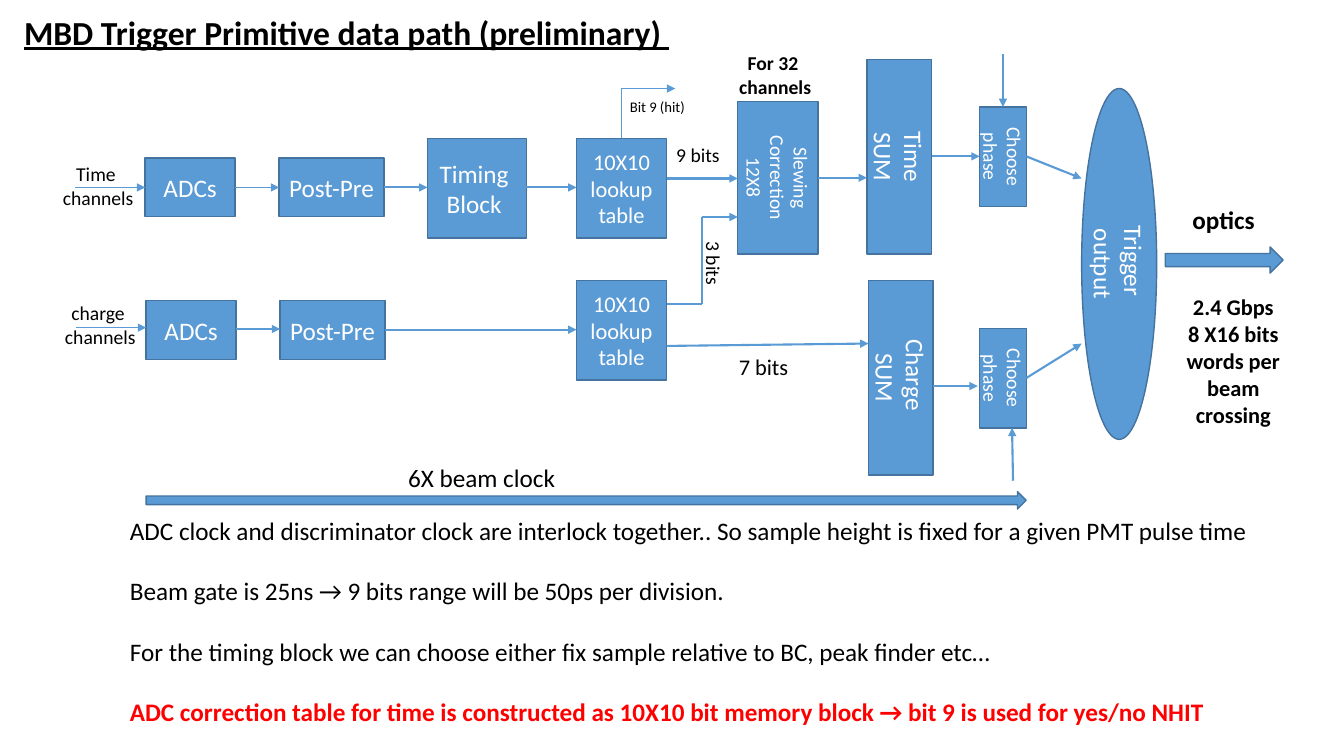
from pptx import Presentation
from pptx.dml.color import RGBColor
from pptx.enum.shapes import MSO_CONNECTOR, MSO_SHAPE
from pptx.enum.text import MSO_ANCHOR, MSO_AUTO_SIZE, PP_ALIGN
from pptx.oxml.ns import qn
from pptx.util import Pt
from lxml import etree

BLUE, EDGE, WHITE, BLACK, RED = "5B9BD5", "43739E", "FFFFFF", "000000", "FF0000"


def paint(part, color):
    part.rgb = RGBColor.from_string(color)


def write(frame, text, size, color, bold, align):
    frame.text = text
    for para in frame.paragraphs:
        para.alignment = align
        for run in para.runs:
            run.font.name = "Calibri"
            run.font.size = Pt(size)
            run.font.bold = bold
            paint(run.font.color, color)


deck = Presentation()
deck.slide_width, deck.slide_height = Pt(960), Pt(540)
slide = deck.slides.add_slide(deck.slide_layouts[6])
shapes = slide.shapes

# Blocks: kind, left, top, width, height, text, size, vertical
RECT, OVAL, ARROW = MSO_SHAPE.RECTANGLE, MSO_SHAPE.OVAL, MSO_SHAPE.RIGHT_ARROW
blocks = [
    (RECT, 305.3, 98.8, 70.8, 71.2, "Timing \nBlock ", 18, False),
    (RECT, 527, 72.7, 57.4, 108.8, "Slewing\nCorrection\n12X8", 14, True),
    (RECT, 619.2, 42.3, 46.2, 139.2, "Time\nSUM", 18, True),
    (RECT, 620.4, 200.2, 46.2, 139.2, "Charge \nSUM", 18, True),
    (OVAL, 772.6, 63.2, 53.6, 250.6, "Trigger \noutput", 18, True),
    (ARROW, 104.4, 351.2, 628.6, 12.4, "", 18, False),
    (ARROW, 832.4, 176.4, 84.2, 18.7, "", 18, False),
]
# Blocks found in both the time row and the charge row
for left, top, table, phase in [(103.7, 113, 98.8, 76.4), (104.4, 214.8, 200.2, 234.6)]:
    blocks += [
        (RECT, left, top, 64.3, 41.8, "ADCs", 18, False),
        (RECT, left + 95.7, top, 74.9, 41.8, "Post-Pre", 18, False),
        (RECT, 411.8, table, 64.3, 71.2, "10X10 lookup table", 16, False),
        (RECT, 699.8, phase, 33.3, 71.2, "Choose\nphase", 14, True),
    ]
for kind, left, top, width, height, text, size, turned in blocks:
    block = shapes.add_shape(kind, Pt(left), Pt(top), Pt(width), Pt(height))
    block.shadow.inherit = False
    block.fill.solid()
    paint(block.fill.fore_color, BLUE)
    paint(block.line.color, EDGE)
    block.line.width = Pt(1)
    if text:
        frame = block.text_frame
        frame.word_wrap = True
        frame.vertical_anchor = MSO_ANCHOR.MIDDLE
        write(frame, text, size, WHITE, False, PP_ALIGN.CENTER)
        if turned:
            block.element.txBody.bodyPr.set("vert", "vert")

# Links: start x, y, end x, y, line width, arrowhead
links = [
    (716.4, 38.9, 716.4, 76.4, 1.5, True),
    (723.6, 343.4, 722.9, 305.6, 1.5, True),
    (476.1, 127.5, 527, 127.5, 1.5, True),
    (476.1, 216.9, 501.2, 216.9, 1.5, False),
    (501.2, 216.9, 501.2, 155, 1.5, False),
    (501.2, 155, 527, 155, 1.5, True),
    (665.4, 111.7, 699.8, 111.7, 1.5, True),
    (666.6, 275.8, 698.4, 275.8, 1.5, True),
    (476.1, 247.1, 620.4, 245.4, 1.5, True),
    (53.5, 133.9, 103.7, 133.9, 1.25, True),
    (54.4, 234, 104.4, 234, 1.25, True),
    (168, 133.9, 199.4, 133.9, 1.25, True),
    (274.3, 133.9, 305.3, 133.9, 1.5, True),
    (376.1, 133.9, 411.8, 133.9, 1.5, True),
    (168.7, 235, 200.1, 235, 1.25, True),
    (275, 235.5, 411.8, 235.5, 1.5, True),
    (584.4, 127, 619.2, 127, 1.5, True),
    (733.1, 111.7, 772.6, 127.5, 1.5, True),
    (733.1, 270, 772.6, 245.4, 1.5, True),
    (480.9, 100, 445.6, 61.9, 0.5, True),
]
for x1, y1, x2, y2, width, head in links:
    link = shapes.add_connector(MSO_CONNECTOR.STRAIGHT, Pt(x1), Pt(y1), Pt(x2), Pt(y2))
    paint(link.line.color, BLUE)
    link.line.width = Pt(width)
    props = link.element.spPr
    if head:
        etree.SubElement(props.find(qn("a:ln")), qn("a:tailEnd"), type="triangle")
    etree.SubElement(props, qn("a:effectLst"))

# The last link is the hit bit: one right-angle bend, turned by 90 degrees
props.find(qn("a:xfrm")).set("rot", "5400000")
props.find(qn("a:prstGeom")).set("prst", "bentConnector2")

# Labels: left, top, width, height, text, size, bold, align, wrap, rotation
LEFT, MID = PP_ALIGN.LEFT, PP_ALIGN.CENTER
labels = [
    (10.1, 5, 485.3, 36, "MBD Trigger Primitive data path (preliminary) ", 24, True, LEFT, False, 0),
    (475.9, 98.6, 46.1, 24.2, "9 bits", 14, False, LEFT, False, 0),
    (486.7, 176.4, 46.1, 24.2, "3 bits", 14, False, LEFT, False, 90),
    (520.6, 248.4, 51.1, 26.6, "7 bits", 16, False, LEFT, True, 0),
    (284.4, 326.9, 121, 29, "6X beam clock", 18, False, LEFT, False, 0),
    (37.4, 112.3, 65.5, 41, "Time \nchannels", 14, False, MID, False, 0),
    (38.9, 211.7, 65.5, 41, "charge \nchannels", 14, False, MID, False, 0),
    (826.6, 205.9, 108.7, 104.4, "2.4 Gbps\n8 X16 bits words per beam crossing",
     16, True, MID, True, 0),
    (844.6, 142.6, 59.8, 29, "optics", 18, True, LEFT, False, 0),
    (520.6, 33.1, 66.2, 41, "For 32 \nchannels", 14, True, MID, False, 0),
    (442.8, 66.2, 54, 20.2, "Bit 9 (hit)", 10.5, False, LEFT, False, 0),
    (85.7, 364.3, 830.2, 159.8,
     "ADC clock and discriminator clock are interlock together.. "
     "So sample height is fixed for a given PMT pulse time\n"
     "Beam gate is 25ns → 9 bits range will be 50ps per division.\n"
     "For the timing block we can choose either fix sample relative to BC, peak finder etc…\n"
     "ADC correction table for time is constructed as 10X10 bit memory block "
     "→ bit 9 is used for yes/no NHIT", 18, False, LEFT, True, 0),
]
frames = []
for left, top, width, height, text, size, bold, align, wrap, turn in labels:
    label = shapes.add_textbox(Pt(left), Pt(top), Pt(width), Pt(height))
    label.rotation = turn
    frame = label.text_frame
    frame.word_wrap = wrap
    frame.auto_size = MSO_AUTO_SIZE.SHAPE_TO_FIT_TEXT
    write(frame, text, size, BLACK, bold, align)
    frames.append(frame)

# Underlined title, spaced notes with a red last line
title, notes = frames[0], frames[-1]
title.paragraphs[0].runs[0].font.underline = True
for para in notes.paragraphs[1:]:
    para.space_before = Pt(21.6)
final = notes.paragraphs[-1].runs[0].font
final.bold = True
paint(final.color, RED)

deck.save("out.pptx")
